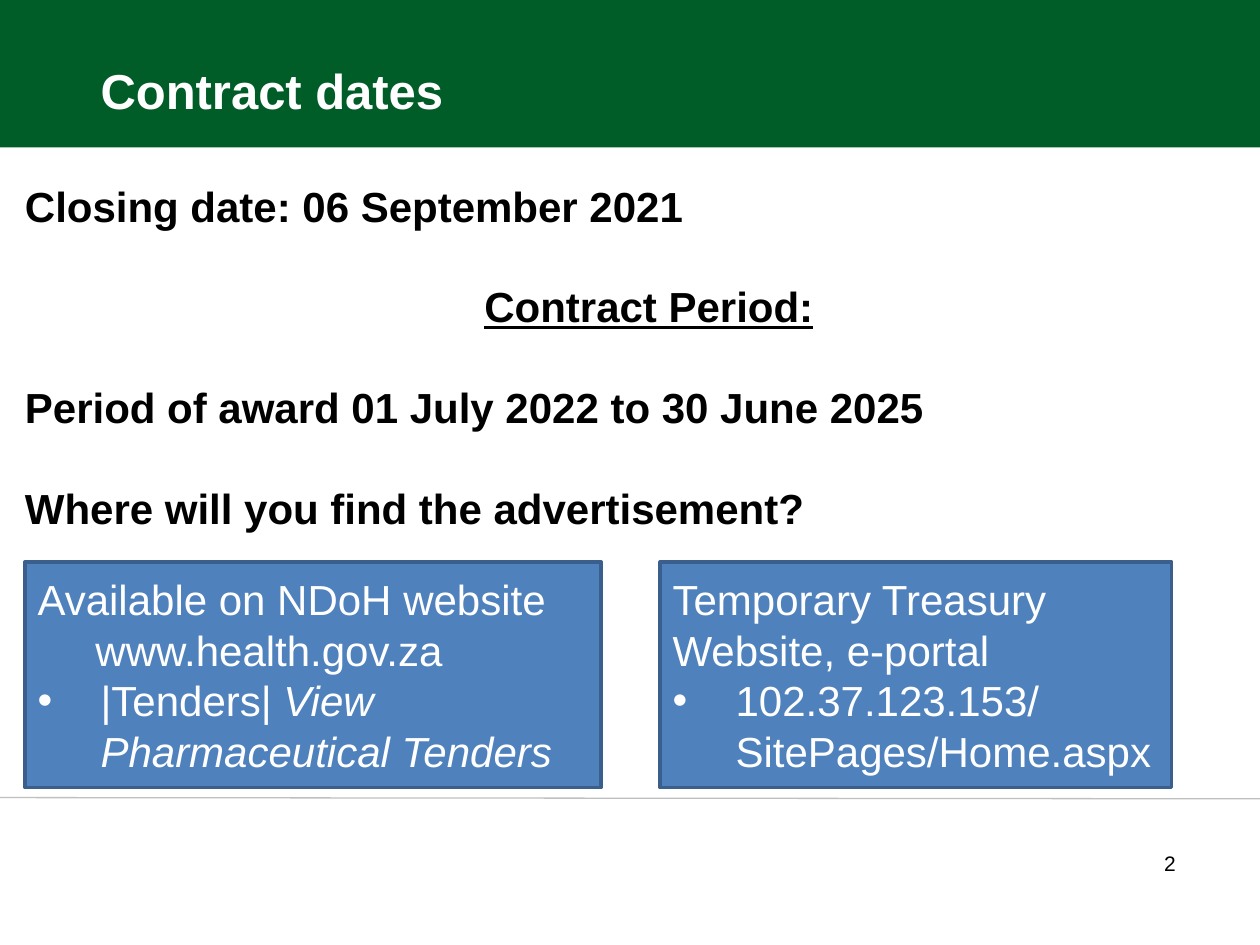
from dataclasses import dataclass

from lxml import etree
from pptx import Presentation
from pptx.dml.color import RGBColor as Rgb
from pptx.enum.shapes import MSO_CONNECTOR as Conn, MSO_SHAPE as Shape
from pptx.enum.text import MSO_ANCHOR as Anchor, PP_ALIGN as Align
from pptx.oxml.ns import qn
from pptx.util import Inches, Pt


@dataclass(frozen=True)
class Theme:
    font: str = "Arial"
    green: str = "005D28"
    blue: str = "4F81BD"
    edge: str = "3A5F8C"
    rule: str = "BFBFBF"
    black: str = "000000"
    white: str = "FFFFFF"
    title: int = 28
    body: int = 24
    small: int = 12
    pitch: float = 28.8


THEME = Theme()


def place(box):
    return [Inches(n) for n in box]


def style(item, values):
    for name, value in values.items():
        setattr(item, name, value)


def write(para, text, size, color, **values):
    run = para.add_run()
    run.text = text
    style(run.font, {"name": THEME.font, "size": Pt(size), **values})
    run.font.color.rgb = Rgb.from_string(color)


def rows(frame, count):
    """Return the given number of paragraphs of an empty frame."""
    return [frame.paragraphs[0]] + [frame.add_paragraph() for _ in range(count - 1)]


def indent(para, left, bullet=False):
    props = para._p.get_or_add_pPr()
    props.set("marL", str(Inches(left)))
    props.set("indent", str(Inches(-left if bullet else 0)))
    if bullet:
        etree.SubElement(props, qn("a:buFont")).set("typeface", THEME.font)
        etree.SubElement(props, qn("a:buChar")).set("char", "•")


def panel(slide, box, fill, edge=None):
    shape = slide.shapes.add_shape(Shape.RECTANGLE, *place(box))
    shape.shadow.inherit = False
    shape.fill.solid()
    shape.fill.fore_color.rgb = Rgb.from_string(fill)
    if edge:
        shape.line.color.rgb = Rgb.from_string(edge)
        shape.line.width = Pt(2)
    else:
        shape.line.fill.background()
    return shape.text_frame


def label(slide, box, **values):
    frame = slide.shapes.add_textbox(*place(box)).text_frame
    style(frame, {"word_wrap": True, **values})
    return frame


def header(slide, box):
    left, top, width, height = box
    panel(slide, box, THEME.green)
    frame = label(slide, (left + 0.7, top, 6.08, height - 0.17),
                  vertical_anchor=Anchor.BOTTOM)
    write(frame.paragraphs[0], "Contract dates", THEME.title, THEME.white, bold=True)


def dates(slide, box):
    lines = [
        ("Closing date: 06 September 2021", False),
        ("Contract Period:", True),
        ("Period of award 01 July 2022 to 30 June 2025", False),
        ("Where will you find the advertisement?", False),
    ]
    frame = label(slide, box, margin_top=Inches(0.07))
    for i, (para, (text, centred)) in enumerate(zip(rows(frame, len(lines)), lines)):
        style(para, {
            "alignment": Align.CENTER if centred else Align.LEFT,
            "line_spacing": Pt(THEME.pitch),
            "space_before": Pt(THEME.pitch if i else 0),
        })
        write(para, text, THEME.body, THEME.black, bold=True, underline=centred)


def source(slide, box, lines):
    """Draw a box of lines, each given as (left indent, bullet, runs)."""
    frame = panel(slide, box, THEME.blue, THEME.edge)
    style(frame, {"word_wrap": True, "vertical_anchor": Anchor.MIDDLE})
    for para, (left, bullet, runs) in zip(rows(frame, len(lines)), lines):
        style(para, {"alignment": Align.LEFT, "line_spacing": Pt(THEME.pitch)})
        indent(para, left, bullet)
        for text, italic in runs:
            write(para, text, THEME.body, THEME.white, italic=italic)


def footer(slide, box):
    left, top, width, height = box
    line = slide.shapes.add_connector(
        Conn.STRAIGHT, *place((left, top, left + width, top + 0.01)))
    line.line.color.rgb = Rgb.from_string(THEME.rule)
    line.line.width = Pt(0.75)
    etree.SubElement(line._element.spPr, qn("a:effectLst"))
    frame = label(slide, (left + 1, top, 8.43, 1.04), vertical_anchor=Anchor.MIDDLE)
    para = frame.paragraphs[0]
    para.alignment = Align.RIGHT
    write(para, "2", THEME.small, THEME.black)


def main():
    deck = Presentation()
    deck.slide_width, deck.slide_height = Inches(10), Inches(7.5)
    slide = deck.slides.add_slide(deck.slide_layouts[6])
    header(slide, (0, 0, 10, 1.17))
    footer(slide, (0, 6.33, 10, 1.17))
    dates(slide, (0.1, 1.36, 10.1, 4.14))
    source(slide, (0.2, 4.46, 4.57, 1.79), [
        (0, False, [("Available on NDoH website", False)]),
        (0.46, False, [("www.health.gov.za", False)]),
        (0.5, True, [("|Tenders| ", False), ("View Pharmaceutical Tenders", True)]),
    ])
    source(slide, (5.24, 4.46, 4.06, 1.79), [
        (0, False, [("Temporary Treasury Website, e-portal", False)]),
        (0.5, True, [("102.37.123.153/SitePages/Home.aspx", False)]),
    ])
    deck.save("out.pptx")


if __name__ == "__main__":
    main()
